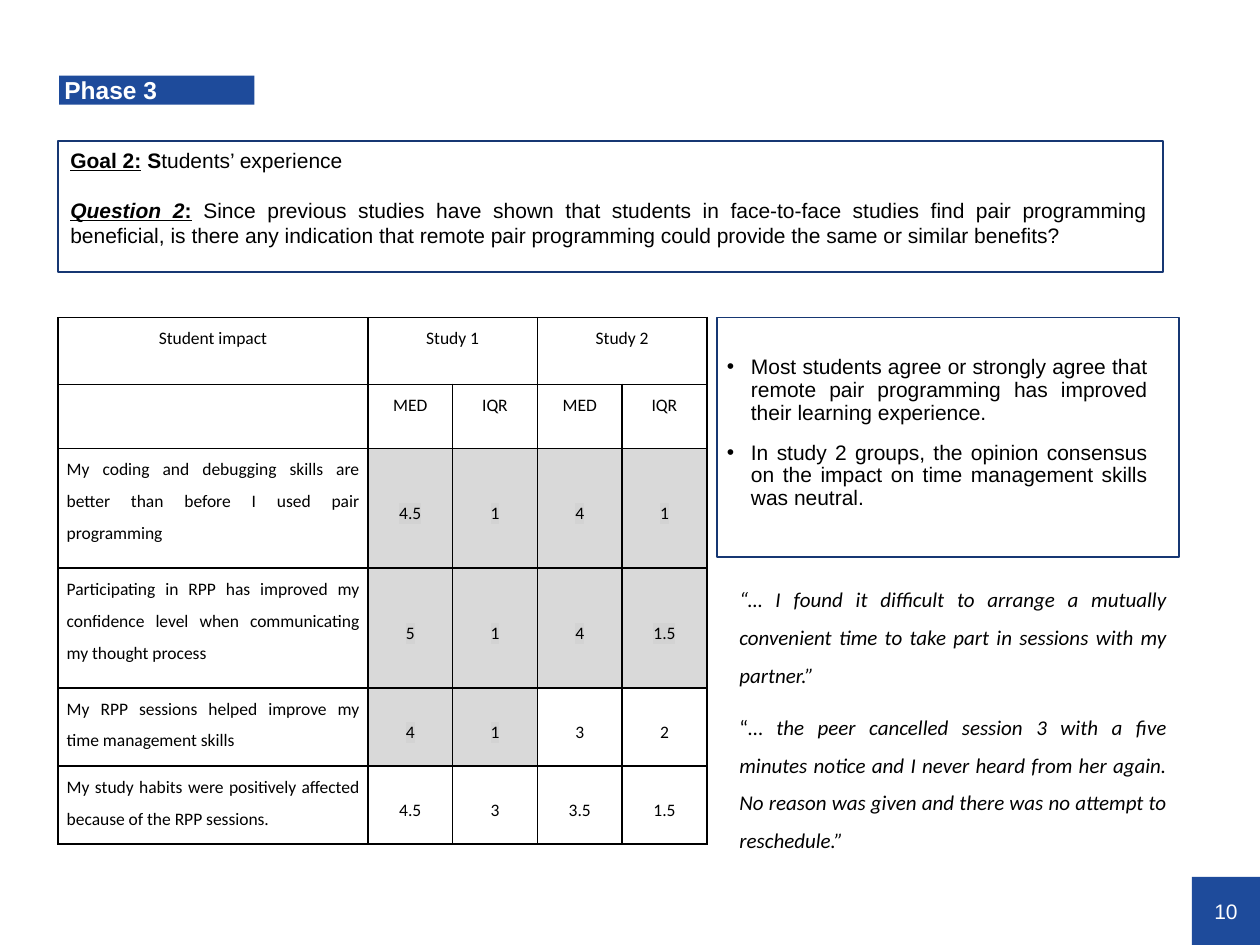
from dataclasses import dataclass

from lxml.etree import SubElement
from pptx import Presentation
from pptx.dml.color import RGBColor
from pptx.enum.shapes import MSO_SHAPE
from pptx.enum.text import MSO_ANCHOR, MSO_AUTO_SIZE, PP_ALIGN
from pptx.oxml.ns import qn
from pptx.util import Inches, Pt

COLS, ROWS = 100, 75  # slide grid
UNIT = Inches(0.1)


@dataclass(frozen=True)
class Theme:
    blue: str = "1E4B9B"
    frame: str = "163773"
    black: str = "000000"
    white: str = "FFFFFF"
    shade: str = "D9D9D9"
    highlight: str = "D3D3D3"
    sans: str = "Arial"
    body: str = "Calibri"
    title_size: int = 14
    text_size: int = 12
    table_size: int = 10


T = Theme()


def rgb(value):
    return RGBColor.from_string(value)


def units(*values):
    return [round(v * UNIT) for v in values]


def set_margins(target, left=1, top=0.5, right=1, bottom=0.5):
    """Set the insets of a text frame or table cell."""
    (target.margin_left, target.margin_top,
     target.margin_right, target.margin_bottom) = units(left, top, right, bottom)


def style_run(r, size, name, color=T.black, marks=""):
    """Format a run; marks holds any of b, i and u."""
    r.font.size, r.font.name = Pt(size), name
    r.font.color.rgb = rgb(color)
    for mark, attr in (("b", "bold"), ("i", "italic"), ("u", "underline")):
        setattr(r.font, attr, mark in marks)


def add_runs(p, parts, size, name):
    for text, marks in parts:
        r = p.add_run()
        r.text = text
        style_run(r, size, name, marks=marks)


def add_rect(s, box, fill=None, line=None):
    sp = s.shapes.add_shape(MSO_SHAPE.RECTANGLE, *units(*box))
    sp.shadow.inherit = False
    if fill:
        sp.fill.solid()
        sp.fill.fore_color.rgb = rgb(fill)
    else:
        sp.fill.background()
    if line:
        sp.line.color.rgb = rgb(line)
        sp.line.width = Pt(1)
    else:
        sp.line.fill.background()
    return sp


def add_paragraphs(s, box, paragraphs, name):
    """Add a justified text box with one list of runs per paragraph."""
    tf = s.shapes.add_textbox(*units(*box)).text_frame
    tf.word_wrap = True
    for i, parts in enumerate(paragraphs):
        p = tf.add_paragraph() if i else tf.paragraphs[0]
        p.alignment = PP_ALIGN.JUSTIFY
        add_runs(p, parts, T.text_size, name)
    return tf


def add_bullet(p, indent):
    pPr = p._p.get_or_add_pPr()
    pPr.set("marL", str(indent))
    pPr.set("indent", str(-indent))
    SubElement(pPr, qn("a:buFont"), typeface=T.sans)
    SubElement(pPr, qn("a:buChar"), char="•")


def title_tag(s, box):
    title = s.shapes.title
    title.left, title.top, title.width, title.height = units(*box)
    title.fill.solid()
    title.fill.fore_color.rgb = rgb(T.blue)
    tf = title.text_frame
    tf.text = "Phase 3"
    tf.auto_size = MSO_AUTO_SIZE.NONE
    tf.vertical_anchor = MSO_ANCHOR.MIDDLE
    set_margins(tf, 0.4, 0.2, 0, 0)
    p = tf.paragraphs[0]
    p.alignment, p.line_spacing = PP_ALIGN.LEFT, 0.9
    style_run(p.runs[0], T.title_size, T.sans, T.white, "b")


def page_number(s, box):
    tf = add_rect(s, box, fill=T.blue).text_frame
    tf.text = "10"
    tf.vertical_anchor = MSO_ANCHOR.MIDDLE
    set_margins(tf, 0, 0, 0, 0)
    tf.paragraphs[0].alignment = PP_ALIGN.CENTER
    style_run(tf.paragraphs[0].runs[0], T.text_size, T.sans, T.white)


def goal_panel(s, box):
    left, top, width, height = box
    tf = add_paragraphs(s, (left, top, width - 0.2, height - 1.3), [
        [("Goal 2:", "bu"), (" S", "b"), ("tudents’ experience", "")],
        [("Question 2", "biu"), (":", "bu"), (" ", "b"),
         ("Since previous studies have shown that students in face-to-face "
          "studies find pair programming beneficial, is there any indication "
          "that remote pair programming could provide the same or similar "
          "benefits?", "")],
    ], T.sans)
    tf.paragraphs[1].space_before = Pt(14)
    add_rect(s, box, line=T.frame)


def findings_panel(s, box):
    left, top, width, height = box
    tf = add_paragraphs(s, (left + 0.8, top + 3.1, width - 3.3, height - 3.1), [
        [("Most students agree or strongly agree that remote pair programming "
          "has improved their learning experience.", "")],
        [("In study 2 groups, the opinion consensus on the impact on time "
          "management skills was neutral.", "")],
    ], T.sans)
    set_margins(tf, 0, 0, 0, 0)
    for i, p in enumerate(tf.paragraphs):
        p.line_spacing = 0.9
        p.space_before = Pt(10 if i else 0)
        add_bullet(p, units(1.9)[0])
    add_rect(s, box, line=T.frame)


def quotes(s, box):
    tf = add_paragraphs(s, box, [
        [("“… I found it difficult to arrange a mutually convenient time to "
          "take part in sessions with my partner.”", "i")],
        [("“… ", ""),
         ("the peer cancelled session 3 with a five minutes notice and I never "
          "heard from her again. No reason was given and there was no attempt "
          "to reschedule.”", "i")],
    ], T.body)
    for p in tf.paragraphs:
        p.line_spacing, p.space_after = 1.5, Pt(8)


def format_cell(cell, align, anchor, shaded):
    set_margins(cell, 0.7, 0, 0.7, 0)
    cell.vertical_anchor = anchor
    tcPr = cell._tc.get_or_add_tcPr()
    for side in ("lnL", "lnR", "lnT", "lnB"):
        ln = SubElement(tcPr, qn(f"a:{side}"), w=str(Pt(1)))
        SubElement(SubElement(ln, qn("a:solidFill")), qn("a:srgbClr"), val=T.black)
    if shaded:
        cell.fill.solid()
        cell.fill.fore_color.rgb = rgb(T.shade)
    else:
        cell.fill.background()
    p = cell.text_frame.paragraphs[0]
    p.alignment, p.line_spacing, p.space_after = align, 1.5, Pt(8)
    for r in p.runs:
        style_run(r, T.table_size, T.body)
        if shaded:
            mark = SubElement(r.font._element, qn("a:highlight"))
            SubElement(mark, qn("a:srgbClr"), val=T.highlight)
            r.font._element.find(qn("a:solidFill")).addnext(mark)


def impact_table(s, box):
    rows = [
        ("Student impact", "Study 1", "", "Study 2", ""),
        ("", "MED", "IQR", "MED", "IQR"),
        ("My coding and debugging skills are better than before I used pair "
         "programming", "4.5", "1", "4", "1"),
        ("Participating in RPP has improved my confidence level when "
         "communicating my thought process", "5", "1", "4", "1.5"),
        ("My RPP sessions helped improve my time management skills",
         "4", "1", "3", "2"),
        ("My study habits were positively affected because of the RPP sessions.",
         "4.5", "3", "3.5", "1.5"),
    ]
    shaded_values = (0, 0, 4, 4, 2, 0)  # leading value cells shaded in each row
    heights = (5.3, 5.1, 9.5, 9.5, 6.2, 6.2)
    label_width = 24.6
    value_width = (box[2] - label_width) / 4
    table = s.shapes.add_table(len(rows), 5, *units(*box)).table
    for i, column in enumerate(table.columns):
        column.width = units(value_width if i else label_width)[0]
    for i, (texts, height) in enumerate(zip(rows, heights)):
        table.rows[i].height = units(height)[0]
        for j, text in enumerate(texts):
            cell = table.cell(i, j)
            cell.text = text
            is_label = i > 1 and j == 0
            is_value = i > 1 and j > 0
            format_cell(cell,
                        PP_ALIGN.JUSTIFY if is_label else PP_ALIGN.CENTER,
                        MSO_ANCHOR.MIDDLE if is_value else MSO_ANCHOR.TOP,
                        0 < j <= shaded_values[i])
    for j in (1, 3):
        table.cell(0, j).merge(table.cell(0, j + 1))


def main():
    prs = Presentation()
    prs.slide_width, prs.slide_height = units(COLS, ROWS)
    s = prs.slides.add_slide(prs.slide_layouts[5])
    left, body_top, corner = 4.6, 25.2, 5.4
    page_number(s, (COLS - corner, ROWS - corner, corner, corner))
    title_tag(s, (4.7, 6, 15.5, 2.3))
    findings_panel(s, (56.9, body_top, 36.7, 19))
    goal_panel(s, (left, 11.2, 87.7, 10.4))
    impact_table(s, (left, body_top, 51.5, 41.8))
    quotes(s, (57.7, 45.1, 35.9, 23))
    prs.save("out.pptx")


if __name__ == "__main__":
    main()
